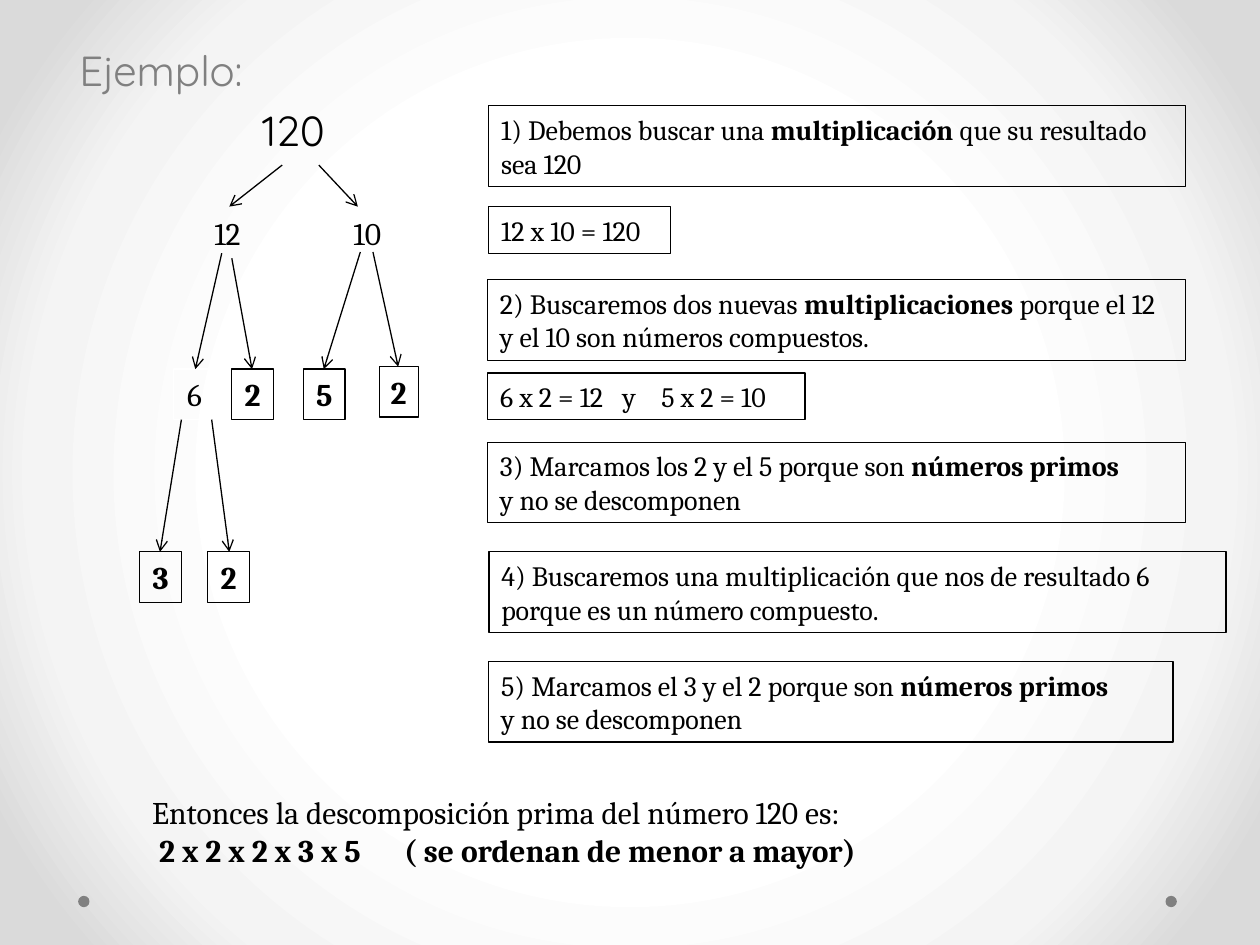
"""Build the slide that explains the prime factorisation of 120 with a factor tree."""
from pptx import Presentation
from pptx.dml.color import RGBColor as RGB
from pptx.enum.shapes import MSO_CONNECTOR as Connector, MSO_SHAPE as Shape
from pptx.enum.text import MSO_ANCHOR as Anchor, MSO_AUTO_SIZE as AutoSize, PP_ALIGN as Align
from pptx.oxml import parse_xml
from pptx.oxml.ns import nsdecls
from pptx.util import Inches, Pt
from lxml.etree import SubElement

THEME = {
    "black": RGB.from_string("000000"), "white": RGB.from_string("FFFFFF"),
    "gray": RGB.from_string("808080"),
    "background": ((50, "FFFFFF"), (76, "F4F4F4"), (92, "DADADA")),
    "title_font": "Quicksand", "text_font": "Cambria",
    "title_size": Pt(24), "number_size": Pt(18), "step_size": Pt(16), "line_width": Pt(0.75),
}
DRAWING = "{http://schemas.openxmlformats.org/drawingml/2006/main}"

presentation = Presentation()
presentation.slide_width, presentation.slide_height = Inches(10), Inches(7.5)
COLUMN, ROW = presentation.slide_width / 100, presentation.slide_height / 75
slide = presentation.slides.add_slide(presentation.slide_layouts[5])


def place(columns, rows):
    """Turn grid columns and rows into slide lengths."""
    return round(columns * COLUMN), round(rows * ROW)


def write(shape, lines, size, font="text_font", color="black", align=Align.LEFT,
          anchor=Anchor.MIDDLE, wrap=True, tabs=()):
    """Fill a shape with lines, where the parts between asterisks are bold."""
    frame = shape.text_frame
    frame_format = {"word_wrap": wrap, "auto_size": AutoSize.NONE, "vertical_anchor": anchor}
    for name, value in frame_format.items():
        setattr(frame, name, value)
    for index, line in enumerate(lines):
        paragraph = frame.add_paragraph() if index else frame.paragraphs[0]
        paragraph.alignment = align
        if "\t" in line:
            tab_list = SubElement(paragraph._p.get_or_add_pPr(), DRAWING + "tabLst")
            for tab in tabs:
                SubElement(tab_list, DRAWING + "tab", pos=str(round(tab * COLUMN)), algn="l")
        for part, text in enumerate(line.split("*")):
            if text:
                run = paragraph.add_run()
                run.text = text
                run_format = {"name": THEME[font], "size": THEME[size], "bold": part % 2 == 1}
                for name, value in run_format.items():
                    setattr(run.font, name, value)
                run.font.color.rgb = THEME[color]


stops = "".join(f'<a:gs pos="{share * 1000}"><a:srgbClr val="{color}"/></a:gs>'
                for share, color in THEME["background"])
slide._element.cSld.insert(0, parse_xml(
    f'<p:bg {nsdecls("p", "a")}><p:bgPr><a:gradFill rotWithShape="1"><a:gsLst>{stops}</a:gsLst>'
    '<a:path path="circle"><a:fillToRect l="50000" t="50000" r="50000" b="50000"/></a:path>'
    '</a:gradFill><a:effectLst/></p:bgPr></p:bg>'))

for left in (6.2, 92.5):
    dot = slide.shapes.add_shape(Shape.OVAL, *place(left, 71.1), *place(0.9, 0.9))
    dot.shadow.inherit = False
    dot.fill.solid()
    dot.fill.fore_color.rgb = THEME["gray"]
    dot.line.fill.background()

title = slide.shapes.title
title.left, title.top = place(5.3, 3)
title.width, title.height = place(40, 5)
write(title, ["Ejemplo:"], "title_size", "title_font", "gray", anchor=Anchor.TOP)

root = slide.shapes.add_textbox(*place(18.3, 7.8), *place(10, 5))
write(root, ["120"], "title_size", "title_font", align=Align.CENTER, anchor=Anchor.TOP)

tree_numbers = (
    ("12", 15.8, 16.5, 4.5, None), ("10", 26.9, 16.5, 4.5, None),
    ("6", 13.8, 29.3, 3.3, "white"), ("*2*", 18.4, 29.3, 3.3, "black"),
    ("*5*", 24.1, 29.3, 3.3, "black"), ("*2*", 30.1, 29.1, 3.1, "black"),
    ("*3*", 11.1, 43.8, 3.3, "black"), ("*2*", 16.5, 43.8, 3.3, "black"),
)
for text, left, top, width, outline in tree_numbers:
    number = slide.shapes.add_textbox(*place(left, top), *place(width, 4))
    write(number, [text], "number_size", align=Align.CENTER, wrap=False)
    if outline:
        number.line.color.rgb = THEME[outline]
        number.line.width = THEME["line_width"]

branches = (
    (22.4, 13.1, 18.2, 16.4), (25.3, 13.1, 28.4, 16.4),
    (17.6, 20.1, 15.5, 29.3), (18.4, 20.5, 20, 29.3),
    (28.6, 20, 25.7, 29.3), (29.6, 20, 31.6, 29.1),
    (14.4, 33.3, 12.7, 43.8), (16.8, 33.3, 18.2, 43.8),
)
for start_x, start_y, end_x, end_y in branches:
    branch = slide.shapes.add_connector(
        Connector.STRAIGHT, *place(start_x, start_y), *place(end_x, end_y))
    branch.line.color.rgb = THEME["black"]
    branch.line.width = THEME["line_width"]
    SubElement(branch.line._get_or_add_ln(), DRAWING + "tailEnd", type="arrow")
    SubElement(branch._element.spPr, DRAWING + "effectLst")

steps = (
    (38.8, 8.4, 55.3, 6.4, ["1) Debemos buscar una *multiplicación *que su resultado sea 120"]),
    (38.8, 16.4, 14.4, 3.7, ["12 x 10 = 120"]),
    (38.7, 22.2, 55.4, 6.4, ["2) Buscaremos dos nuevas *multiplicaciones *porque el 12 "
                             "y el 10 son números compuestos."]),
    (38.7, 29.6, 25.2, 3.7, ["6 x 2 = 12\ty\t5 x 2 = 10"]),
    (38.7, 35.1, 55.4, 6.4, ["3) Marcamos los 2 y el 5 porque son *números primos*",
                             "y no se descomponen"]),
    (38.8, 43.8, 58.5, 6.4, ["4) Buscaremos una multiplicación que nos de resultado 6",
                             "porque es un número compuesto."]),
    (38.8, 52.5, 54.3, 6.4, ["5) Marcamos el 3 y el 2 porque son *números primos*",
                             "y no se descomponen"]),
)
for left, top, width, height, lines in steps:
    step = slide.shapes.add_textbox(*place(left, top), *place(width, height))
    step.line.color.rgb = THEME["black"]
    step.line.width = THEME["line_width"]
    write(step, lines, "step_size", tabs=(9.7, 12.8))

conclusion = slide.shapes.add_textbox(*place(11.1, 62.4), *place(62.3, 7.1))
write(conclusion, ["Entonces la descomposición prima del número 120 es:",
                   " *2 x 2 x 2 x 3 x 5\t( se ordenan de menor a mayor)*"],
      "number_size", tabs=(20,))

presentation.save("out.pptx")
